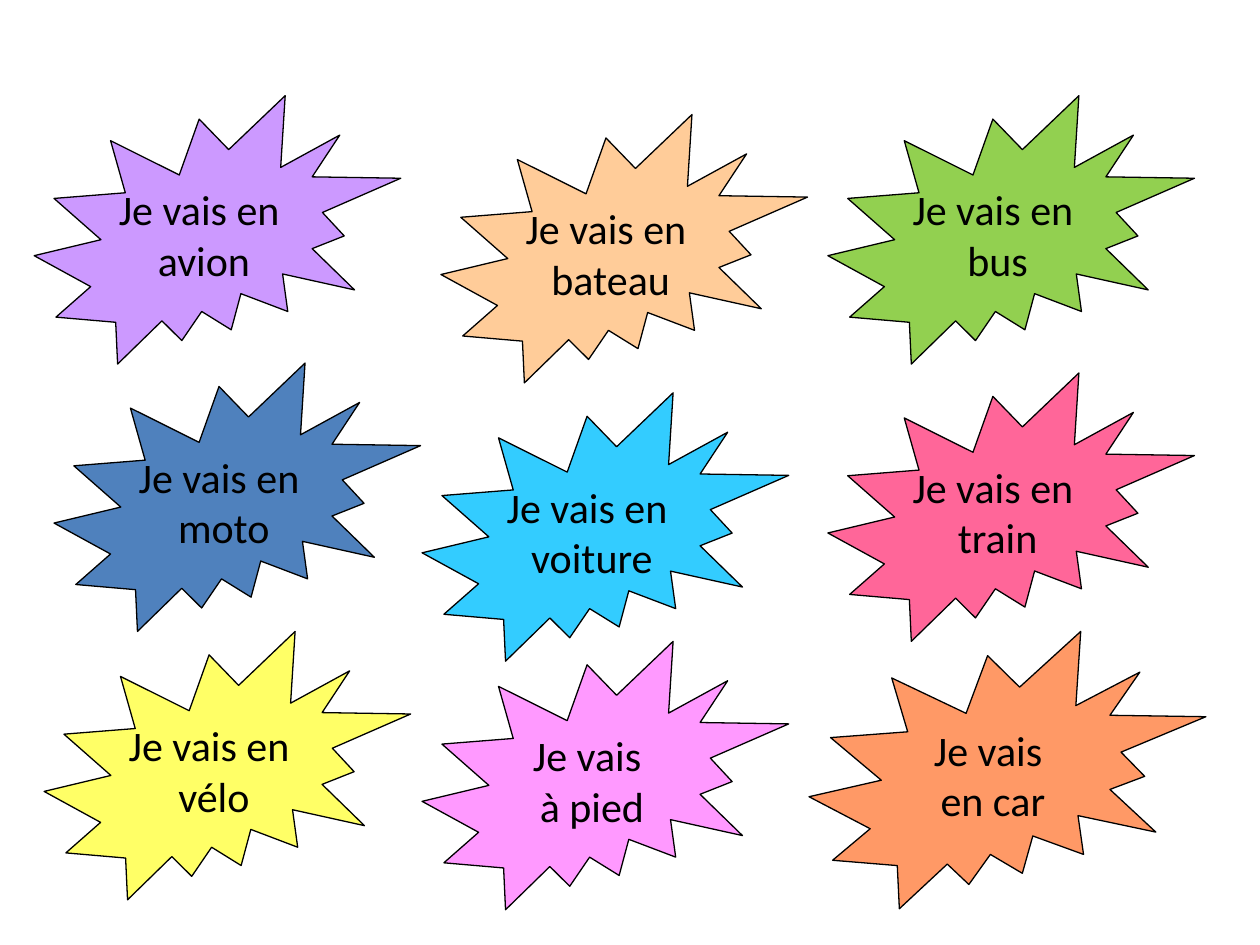
from pptx import Presentation
from pptx.dml.color import RGBColor
from pptx.enum.shapes import MSO_SHAPE
from pptx.enum.text import MSO_ANCHOR, PP_ALIGN
from pptx.util import Cm, Pt

COLORS = {
    "ink": "000000",
    "bateau": "FFCC99",
    "bus": "92D050",
    "car": "FF9966",
    "vélo": "FFFF66",
    "voiture": "33CCFF",
    "avion": "CC99FF",
    "moto": "4F81BD",
    "pied": "FF99FF",
    "train": "FF6699",
}
BURST = (7.39, 5.41)
WIDE_BURST = (8, 5.59)

# Transport, left and top (cm), size (cm), from back to front
BURSTS = [
    ("bateau", 8.89, 2.31, BURST),
    ("bus", 16.69, 1.93, BURST),
    ("car", 16.31, 12.73, WIDE_BURST),
    ("vélo", 0.89, 12.73, BURST),
    ("voiture", 8.51, 7.92, BURST),
    ("avion", 0.69, 1.93, BURST),
    ("moto", 1.09, 7.32, BURST),
    ("pied", 8.51, 12.93, BURST),
    ("train", 16.69, 7.52, BURST),
]
# Phrases split by a line break within one paragraph
BROKEN_PHRASES = {"car": ("Je vais ", "en car"), "pied": ("Je vais ", "à pied")}


def rgb(name):
    return RGBColor.from_string(COLORS[name])


def add_run(p, text):
    r = p.add_run()
    r.text = text
    r.font.name = "Calibri"
    r.font.size = Pt(24)
    r.font.color.rgb = rgb("ink")


def add_phrase(tf, transport):
    p = tf.paragraphs[0]
    p.alignment = PP_ALIGN.CENTER
    if transport in BROKEN_PHRASES:
        first, second = BROKEN_PHRASES[transport]
        add_run(p, first)
        p.add_line_break()
    else:
        first, second = "Je vais en ", transport
        add_run(p, first)
        p = tf.add_paragraph()
        p.alignment = PP_ALIGN.CENTER
    add_run(p, second)


def add_burst(s, transport, left, top, size):
    width, height = size
    sp = s.shapes.add_shape(
        MSO_SHAPE.EXPLOSION2, Cm(left), Cm(top), Cm(width), Cm(height))
    sp.shadow.inherit = False
    sp.fill.solid()
    sp.fill.fore_color.rgb = rgb(transport)
    sp.line.color.rgb = rgb("ink")
    sp.line.width = Pt(0.75)
    tf = sp.text_frame
    tf.word_wrap = False
    tf.vertical_anchor = MSO_ANCHOR.MIDDLE
    add_phrase(tf, transport)


def main():
    prs = Presentation()
    prs.slide_width, prs.slide_height = Cm(25.4), Cm(19.05)
    s = prs.slides.add_slide(prs.slide_layouts[6])
    for burst in BURSTS:
        add_burst(s, *burst)
    prs.save("out.pptx")


if __name__ == "__main__":
    main()
